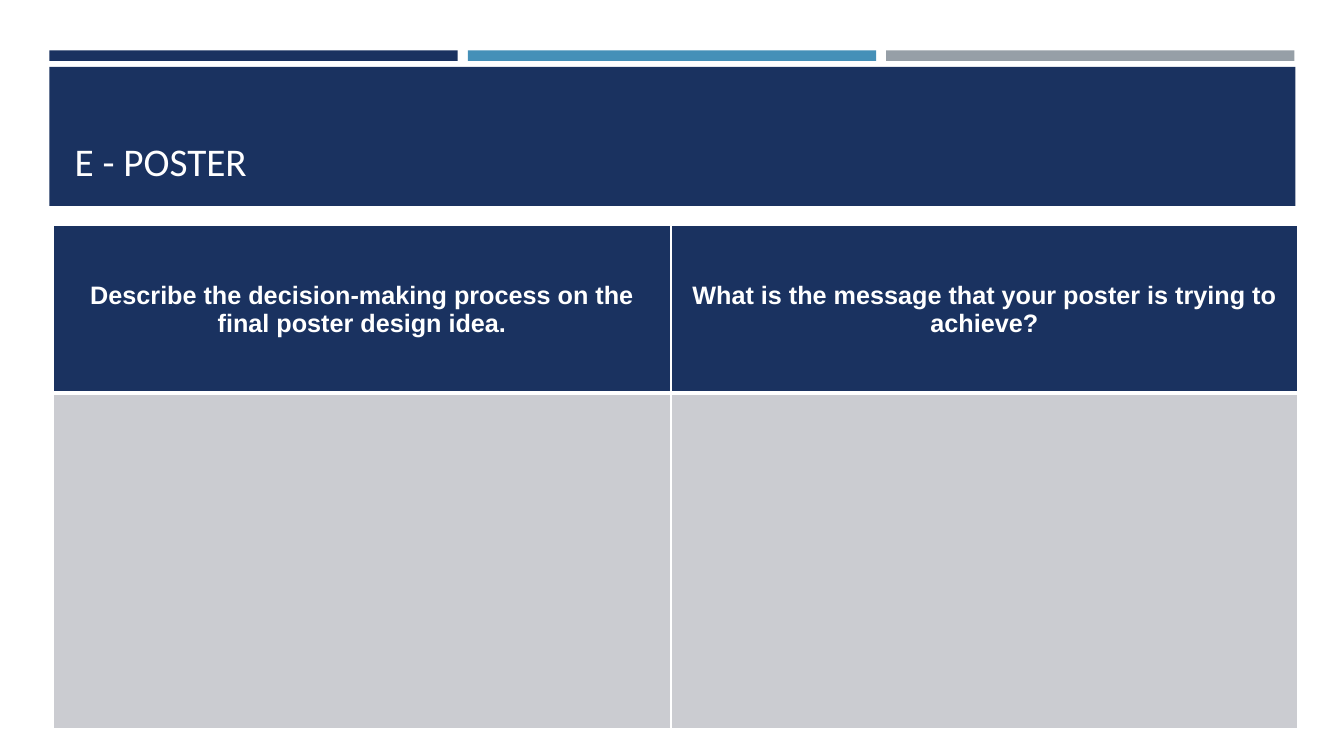
from dataclasses import dataclass

from lxml import etree
from pptx import Presentation
from pptx import util as u
from pptx.dml.color import RGBColor
from pptx.enum import shapes, text
from pptx.oxml import ns

WIDE, HIGH = u.Inches(13.33), u.Inches(7.5)
HUES = {"navy": "1A3260", "blue": "4590B8", "steel": "969FA7",
        "pale": "CBCCD1", "white": "FFFFFF"}
HEADS = ["Describe the decision-making process on the final poster design idea.",
         "What is the message that your poster is trying to achieve?"]
COLS, ROWS = [45.98, 46.65], [22.13, 44.4]
LEFT, BAR, STEP = 3.68, 30.38, 31.13


@dataclass
class Box:
    """A rectangle in percent of the slide's width and height."""
    left: float
    top: float
    wide: float
    high: float
    hue: str = "navy"

    def place(self) -> tuple:
        return across(self.left), down(self.top), across(self.wide), down(self.high)


def across(share: float) -> u.Emu:
    return u.Emu(round(WIDE * share / 100))


def down(share: float) -> u.Emu:
    return u.Emu(round(HIGH * share / 100))


def tint(hue: str) -> RGBColor:
    return RGBColor.from_string(HUES[hue])


def style(item, form: dict) -> None:
    for name, value in form.items():
        setattr(item, name, value)


def write(frame, words: str, align, form: dict) -> None:
    frame.text = words
    line = frame.paragraphs[0]
    line.alignment = align
    font = line.runs[0].font
    style(font, form)
    font.color.rgb = tint("white")


def draw(slide, box: Box) -> None:
    """Add a plain rectangle behind the title."""
    rect = slide.shapes.add_shape(shapes.MSO_SHAPE.RECTANGLE, *box.place())
    rect.shadow.inherit = False
    rect.fill.solid()
    rect.fill.fore_color.rgb = tint(box.hue)
    rect.line.fill.background()
    slide.shapes.title._element.addprevious(rect._element)


def edge(cell, sides: dict) -> None:
    """Give the cell white borders, with a width in points for each side."""
    props = cell._tc.get_or_add_tcPr()
    for side, width in sides.items():
        line = etree.SubElement(props, ns.qn(f"a:ln{side}"), w=str(u.Pt(width)))
        fill = etree.SubElement(line, ns.qn("a:solidFill"))
        etree.SubElement(fill, ns.qn("a:srgbClr"), val=HUES["white"])


def grid(slide) -> None:
    box = Box(3.94, 29.87, sum(COLS), sum(ROWS))
    table = slide.shapes.add_table(len(ROWS), len(COLS), *box.place()).table
    style(table, {"first_row": False, "horz_banding": False})
    for col, wide in zip(table.columns, COLS):
        col.width = across(wide)
    for row, high in zip(table.rows, ROWS):
        row.height = down(high)
    for c, words in enumerate(HEADS):
        head, body = table.cell(0, c), table.cell(1, c)
        write(head.text_frame, words, text.PP_ALIGN.CENTER,
              {"name": "Arial", "size": u.Pt(18), "bold": True})
        head.vertical_anchor = text.MSO_ANCHOR.MIDDLE
        edge(head, {"L": 1, "R": 1, "T": 1, "B": 3})
        edge(body, {"L": 1, "R": 1, "T": 3, "B": 1})
        for cell, hue in ((head, "navy"), (body, "pale")):
            cell.fill.solid()
            cell.fill.fore_color.rgb = tint(hue)


def main() -> None:
    deck = Presentation()
    style(deck, {"slide_width": WIDE, "slide_height": HIGH})
    slide = deck.slides.add_slide(deck.slide_layouts[5])

    for i, hue in enumerate(("navy", "blue", "steel")):
        draw(slide, Box(LEFT + i * STEP, 6.67, BAR, 1.4, hue))
    draw(slide, Box(LEFT, 8.85, 92.7, 18.4))

    title = slide.shapes.title
    place = Box(4.8, 10.67, 90.45, 14.4).place()
    style(title, dict(zip(("left", "top", "width", "height"), place)))
    write(title.text_frame, "E - POSTER", text.PP_ALIGN.LEFT,
          {"name": "Calibri", "size": u.Pt(28)})
    style(title.text_frame, {"vertical_anchor": text.MSO_ANCHOR.BOTTOM,
                             "auto_size": text.MSO_AUTO_SIZE.NONE,
                             "word_wrap": True})
    grid(slide)
    deck.save("out.pptx")


if __name__ == "__main__":
    main()
